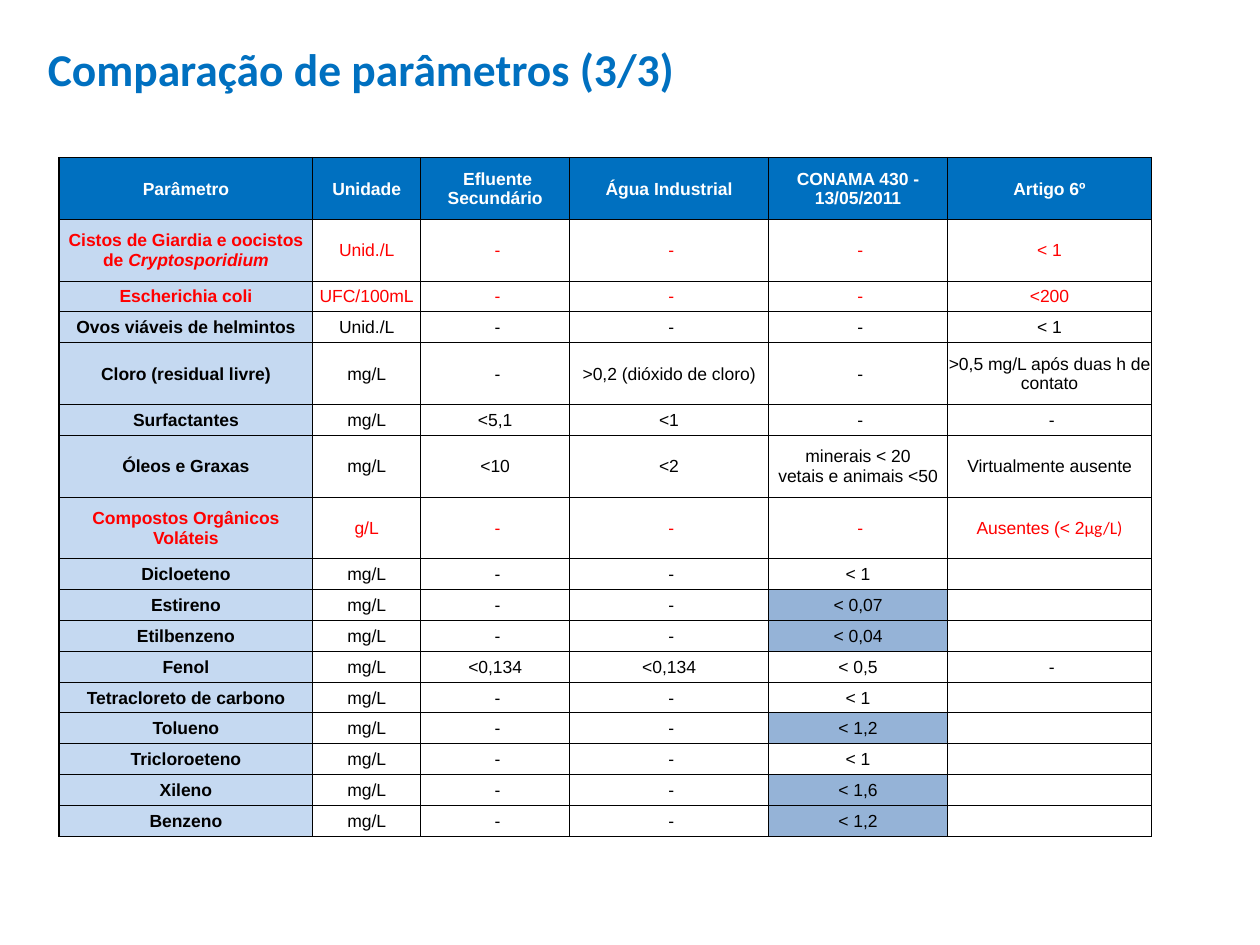
from lxml.etree import SubElement
from pptx import Presentation
from pptx.dml.color import RGBColor
from pptx.enum.text import MSO_ANCHOR, PP_ALIGN
from pptx.oxml.ns import qn
from pptx.util import Inches, Pt

BLUE, PALE, MID = "0070C0", "C5D9F1", "95B3D7"
RED, BLACK, WHITE = "FF0000", "000000", "FFFFFF"
DASH = " -"


def paint(fill, tone):
    fill.solid()
    fill.fore_color.rgb = RGBColor.from_string(tone)


def write(para, text, size, tone, bold, face="Arial", slant=False):
    run = para.add_run()
    run.text = text
    font = run.font
    font.name, font.size, font.bold, font.italic = face, Pt(size), bold, slant
    paint(font.fill, tone)


deck = Presentation()
deck.slide_width, deck.slide_height = Inches(10), Inches(7.5)
slide = deck.slides.add_slide(deck.slide_layouts[5])

title = slide.shapes.title
title.left, title.top = Inches(0.28), Inches(0.27)
title.width, title.height = Inches(5.64), Inches(0.54)
frame = title.text_frame
frame.word_wrap = True
frame.vertical_anchor = MSO_ANCHOR.MIDDLE
para = frame.paragraphs[0]
para.alignment = PP_ALIGN.LEFT
write(para, "Comparação de parâmetros (3/3)", 26, BLUE, True, "Calibri")

rows = [
    ["Parâmetro", "Unidade", " Efluente Secundário", "Água Industrial",
     "CONAMA 430 - 13/05/2011", "Artigo 6º"],
    ["Cistos de Giardia e oocistos de |Cryptosporidium", "Unid./L",
     DASH, DASH, DASH, "< 1"],
    ["Escherichia coli", "UFC/100mL", DASH, DASH, DASH, "<200"],
    ["Ovos viáveis de helmintos", "Unid./L", DASH, DASH, DASH, "< 1"],
    ["Cloro (residual livre)", "mg/L", DASH, ">0,2 (dióxido de cloro)", DASH,
     ">0,5 mg/L após duas h de contato"],
    ["Surfactantes", "mg/L", "<5,1", "<1", DASH, DASH],
    ["Óleos e Graxas", "mg/L", "<10", "<2",
     "minerais < 20\nvetais e animais <50", "Virtualmente ausente"],
    ["Compostos Orgânicos Voláteis", "g/L", DASH, DASH, DASH,
     "Ausentes (< 2|µg/L)"],
    ["Dicloeteno", "mg/L", DASH, DASH, "< 1", ""],
    ["Estireno", "mg/L", DASH, DASH, "< 0,07", ""],
    ["Etilbenzeno", "mg/L", DASH, DASH, "< 0,04", ""],
    ["Fenol", "mg/L", "<0,134", "<0,134", "< 0,5", DASH],
    ["Tetracloreto de carbono", "mg/L", DASH, DASH, "< 1", ""],
    ["Tolueno", "mg/L", DASH, DASH, "< 1,2", ""],
    ["Tricloroeteno", "mg/L", DASH, DASH, "< 1", ""],
    ["Xileno", "mg/L", DASH, DASH, "< 1,6", ""],
    ["Benzeno", "mg/L", DASH, DASH, "< 1,2", ""],
]
widths = [2.01, 0.86, 1.18, 1.58, 1.42, 1.62]
tall = {0, 1, 4, 6, 7}
alert = {1, 2, 7}
strict = {9, 10, 13, 15, 16}
high = Inches(5.39)
unit = high // (len(rows) + len(tall))

grid = slide.shapes.add_table(len(rows), len(widths), Inches(0.47), Inches(1.25),
                              Inches(sum(widths)), high).table
grid.first_row = grid.horz_banding = False
for col, width in zip(grid.columns, widths):
    col.width = Inches(width)

for r, row in enumerate(rows):
    grid.rows[r].height = unit * (2 if r in tall else 1)
    for c, text in enumerate(row):
        cell = grid.cell(r, c)
        cell.vertical_anchor = MSO_ANCHOR.MIDDLE
        cell.margin_left = cell.margin_top = cell.margin_right = Inches(0.01)
        cell.margin_bottom = 0

        edges = {"L": c == 0, "R": c == len(widths) - 1,
                 "T": r == 0, "B": r == len(rows) - 1}
        props = cell._tc.get_or_add_tcPr()
        for side, outer in edges.items():
            line = SubElement(props, qn(f"a:ln{side}"), w=str(Pt(1 if outer else 0.5)))
            SubElement(SubElement(line, qn("a:solidFill")), qn("a:srgbClr"), val=BLACK)

        if r == 0:
            paint(cell.fill, BLUE)
        elif c == 0:
            paint(cell.fill, PALE)
        elif c == 4 and r in strict:
            paint(cell.fill, MID)
        else:
            cell.fill.background()

        para = cell.text_frame.paragraphs[0]
        para.alignment = PP_ALIGN.CENTER
        tone = WHITE if r == 0 else RED if r in alert else BLACK
        bold = r == 0 or c == 0
        if not text:
            SubElement(para._p, qn("a:endParaRPr"), sz="1000")
            continue
        for n, part in enumerate(text.split("\n")):
            if n:
                para.add_line_break()
            main, _, tail = part.partition("|")
            write(para, main, 10, tone, bold)
            if tail:
                write(para, tail, 10, tone, bold, "Calibri" if c else "Arial", c == 0)

deck.save("out.pptx")
